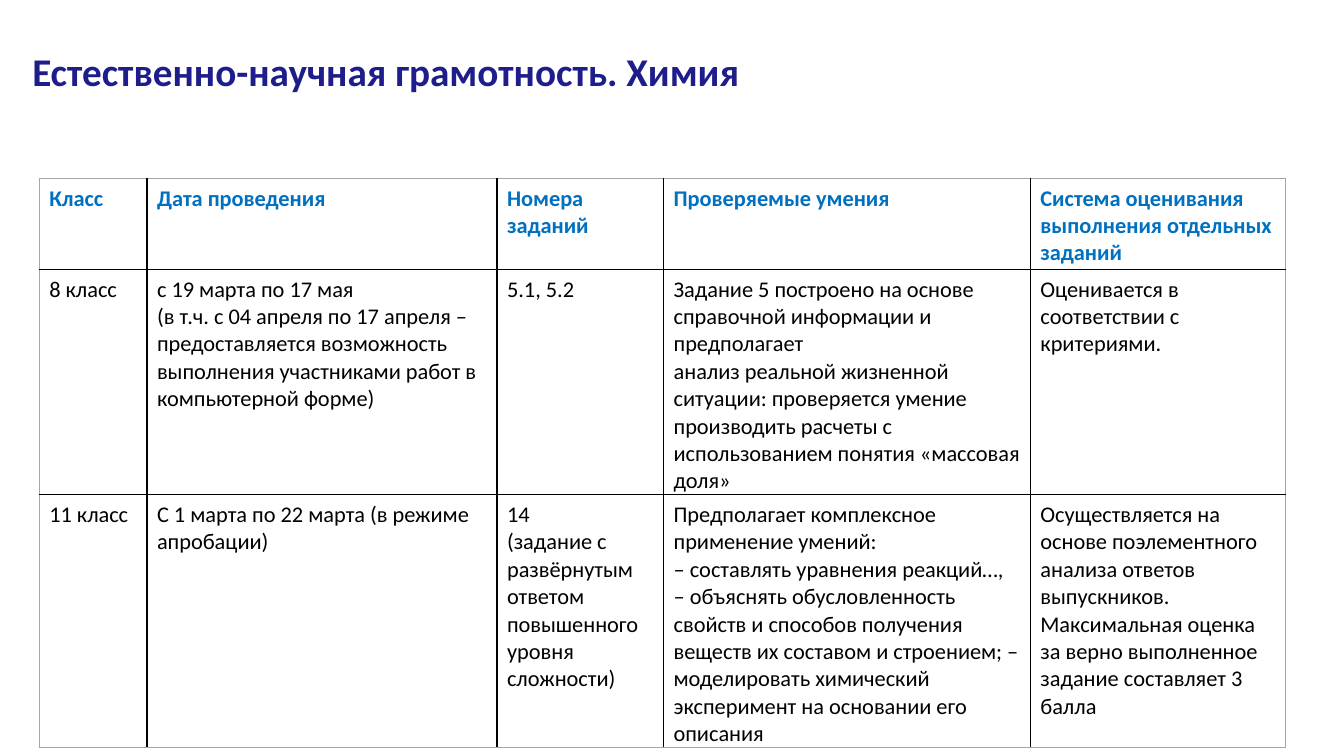
import dataclasses

import lxml.etree
import pptx
import pptx.dml.color
import pptx.enum.text
import pptx.oxml.ns
import pptx.util

Pt = pptx.util.Pt


# Colours and type sizes
@dataclasses.dataclass(frozen=True)
class Theme:
    font: str = "Calibri"
    title: str = "1D1D8B"
    head: str = "0070C0"
    text: str = "000000"
    grid: str = "000000"
    edge: str = "A6A6A6"
    big: int = 28
    small: int = 16


THEME = Theme()

# Table content: "\n" is a line break, a list item is a paragraph
COLS = [77, 250, 119, 262, 182]
ROWS = [65, 161, 180]
CELLS = [
    [
        ["Класс"],
        ["Дата проведения"],
        ["Номера заданий"],
        ["Проверяемые умения"],
        ["Система оценивания выполнения отдельных заданий"],
    ],
    [
        ["8 класс"],
        ["с 19 марта по 17 мая\n(в т.ч. с 04 апреля по 17 апреля – предоставляется "
         "возможность выполнения участниками работ в компьютерной форме)"],
        ["5.1, 5.2"],
        ["Задание 5 построено на основе справочной информации и предполагает",
         "анализ реальной жизненной ситуации: проверяется умение производить "
         "расчеты с использованием понятия «массовая доля»"],
        ["Оценивается в", "соответствии с критериями."],
    ],
    [
        ["11 класс"],
        ["С 1 марта по 22 марта (в режиме апробации)"],
        ["14\n(задание с развёрнутым ответом повышенного уровня сложности)"],
        ["Предполагает комплексное применение умений:\n"
         "– составлять уравнения реакций…,\n"
         "– объяснять обусловленность свойств и способов получения веществ их "
         "составом и строением; – моделировать химический эксперимент на "
         "основании его описания"],
        ["Осуществляется на основе поэлементного анализа ответов выпускников. "
         "Максимальная оценка за верно выполненное задание составляет 3 балла"],
    ],
]


def add_run(para, text, size, color, bold):
    run = para.add_run()
    run.text = text
    run.font.name = THEME.font
    run.font.size = Pt(size)
    run.font.bold = bold
    run.font.color.rgb = pptx.dml.color.RGBColor.from_string(color)


def fill_text(frame, paras, size, color, bold):
    for i, text in enumerate(paras):
        para = frame.add_paragraph() if i else frame.paragraphs[0]
        para.alignment = pptx.enum.text.PP_ALIGN.LEFT
        for j, line in enumerate(text.split("\n")):
            if j:
                para.add_line_break()
            add_run(para, line, size, color, bold)


def add_title(slide, text):
    title = slide.shapes.title
    title.left, title.top, title.width, title.height = Pt(16), Pt(30), Pt(636), Pt(63)
    frame = title.text_frame
    frame.auto_size = pptx.enum.text.MSO_AUTO_SIZE.NONE
    frame.vertical_anchor = pptx.enum.text.MSO_ANCHOR.TOP
    fill_text(frame, [text], THEME.big, THEME.title, True)


def set_lines(cell, colors):
    """Draw the cell borders; colors maps L, R, T, B to a colour."""
    props = cell._tc.get_or_add_tcPr()
    qn = pptx.oxml.ns.qn
    for i, side in enumerate("LRTB"):
        line = lxml.etree.Element(qn("a:ln" + side), w=str(Pt(1)))
        fill = lxml.etree.SubElement(line, qn("a:solidFill"))
        lxml.etree.SubElement(fill, qn("a:srgbClr"), val=colors[side])
        props.insert(i, line)


def add_grid(slide, left, top):
    rows, cols = len(ROWS), len(COLS)
    frame = slide.shapes.add_table(
        rows, cols, Pt(left), Pt(top), Pt(sum(COLS)), Pt(sum(ROWS)))
    table = frame.table
    for col, width in zip(table.columns, COLS):
        col.width = Pt(width)
    for row, height in zip(table.rows, ROWS):
        row.height = Pt(height)
    for r, line in enumerate(CELLS):
        for c, paras in enumerate(line):
            cell = table.cell(r, c)
            cell.fill.background()
            cell.margin_top, cell.margin_bottom = Pt(4.5), 0
            head = r == 0
            color = THEME.head if head else THEME.text
            fill_text(cell.text_frame, paras, THEME.small, color, head)
            # Outer edges are grey, inner lines black
            outer = {"L": c == 0, "R": c == cols - 1, "T": r == 0, "B": r == rows - 1}
            set_lines(cell, {side: THEME.edge if out else THEME.grid
                             for side, out in outer.items()})


def main():
    deck = pptx.Presentation()
    deck.slide_width, deck.slide_height = Pt(960), Pt(540)
    slide = deck.slides.add_slide(deck.slide_layouts[5])
    add_title(slide, "Естественно-научная грамотность. Химия")
    add_grid(slide, 28, 127.5)
    deck.save("out.pptx")


if __name__ == "__main__":
    main()
